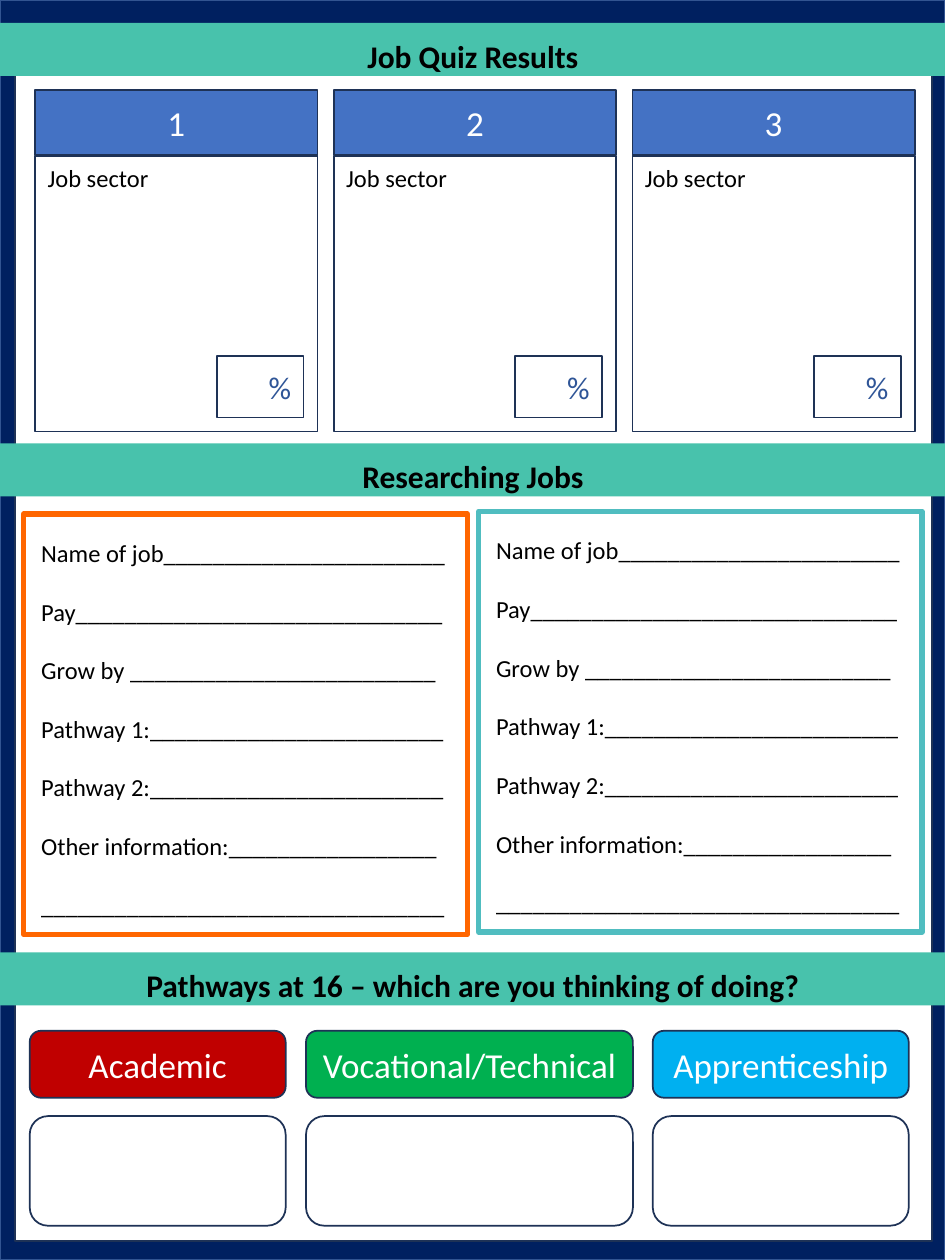
"""Build a one-page careers worksheet: quiz results, job research and pathways."""
from pptx import Presentation
from pptx.dml.color import RGBColor
from pptx.enum import shapes, text
from pptx.util import Cm, Pt

COLOURS = {
    "navy": "002060", "frame": "325491", "outline": "1E3256", "white": "FFFFFF",
    "black": "000000", "band": "48C2AC", "header": "4472C4", "percent": "2F5597",
    "orange": "FF6600", "teal": "50BDC0", "red": "C00000", "green": "00B050",
    "sky": "00B0F0",
}
RECT = shapes.MSO_SHAPE.RECTANGLE
ROUNDED = shapes.MSO_SHAPE.ROUNDED_RECTANGLE
ALIGN = text.PP_ALIGN
RESEARCH_PROMPTS = [("Name of job", 23), ("Pay", 30), ("Grow by ", 25), ("Pathway 1:", 24),
                    ("Pathway 2:", 24), ("Other information:", 17), ("", 33)]


def colour(name):
    """Return the named colour."""
    return RGBColor.from_string(COLOURS[name])


def write(frame, lines, size, ink, align=ALIGN.LEFT, bold=False):
    """Fill a text frame with one formatted paragraph per line."""
    frame.word_wrap = True
    frame.text = "\n".join(lines)
    for paragraph in frame.paragraphs:
        paragraph.alignment = align
        for run in paragraph.runs:
            run.font.name = "Calibri"
            run.font.size = Pt(size)
            run.font.bold = bold
            run.font.color.rgb = colour(ink)


def add_panel(slide, box, fill=None, line="outline", weight=1, kind=RECT):
    """Add a flat panel with an optional fill and outline."""
    panel = slide.shapes.add_shape(kind, *map(Cm, box))
    panel.shadow.inherit = False
    if fill:
        panel.fill.solid()
        panel.fill.fore_color.rgb = colour(fill)
    else:
        panel.fill.background()
    if line:
        panel.line.color.rgb = colour(line)
        panel.line.width = Pt(weight)
    else:
        panel.line.fill.background()
    panel.text_frame.vertical_anchor = text.MSO_ANCHOR.MIDDLE
    return panel


def add_band(slide, box, title):
    """Add a full-width section band with its title."""
    left, top, width, height = box
    add_panel(slide, box, "band", None)
    heading = slide.shapes.add_textbox(Cm(left + 0.05), Cm(top - 0.05),
                                       Cm(width - 0.1), Cm(height)).text_frame
    heading.margin_left = heading.margin_right = 0
    heading.margin_top = heading.margin_bottom = 0
    write(heading, [title], 18, "black", ALIGN.CENTER, True)
    heading.paragraphs[0].line_spacing = Pt(31)


def add_quiz_card(slide, box, rank):
    """Add a ranked result card with job sector and percentage."""
    left, top, width, height = box
    header = add_panel(slide, (left, top, width, 1.3), "header")
    write(header.text_frame, [str(rank)], 20, "white", ALIGN.CENTER)
    add_panel(slide, (left, top + 1.32, width, height - 1.32))
    sector = slide.shapes.add_textbox(Cm(left), Cm(top + 1.35), Cm(4.22), Cm(0.86))
    write(sector.text_frame, ["Job sector"], 14, "black")
    percent = add_panel(slide, (left + width - 2.03, top + height - 1.52, 1.75, 1.24))
    write(percent.text_frame, ["%"], 18, "percent", ALIGN.RIGHT)


def add_research_form(slide, box, border):
    """Add a bordered form with lines to fill in about a job."""
    left, top, width, height = box
    add_panel(slide, box, None, border, 3)
    form = slide.shapes.add_textbox(Cm(left + 0.1), Cm(top + 0.36),
                                    Cm(width - 0.25), Cm(height - 0.45)).text_frame
    write(form, [prompt + "_" * blanks for prompt, blanks in RESEARCH_PROMPTS], 14, "black")
    for paragraph in form.paragraphs[:-1]:
        paragraph.space_after = Pt(16.7)


def add_pathway(slide, box, name, fill):
    """Add a coloured pathway label above an empty answer box."""
    left, top, width, height = box
    label = add_panel(slide, (left, top, width, 1.35), fill, kind=ROUNDED)
    write(label.text_frame, [name], 20, "white", ALIGN.CENTER)
    add_panel(slide, (left, top + 1.72, width, height - 1.72), "white", kind=ROUNDED)


def main():
    """Lay out the worksheet and save it."""
    deck = Presentation()
    deck.slide_width, deck.slide_height = Cm(19.05), Cm(25.4)
    slide = deck.slides.add_slide(deck.slide_layouts[6])
    add_panel(slide, (0, 0, 19.05, 25.4), "navy", "frame")
    add_panel(slide, (0.3, 0.5, 18.49, 24.52), "white")

    sections = [(0.46, "Job Quiz Results"), (8.94, "Researching Jobs"),
                (19.2, "Pathways at 16 – which are you thinking of doing?")]
    for top, title in sections:
        add_band(slide, (0, top, 19.07, 1.07), title)
    for index in range(3):
        add_quiz_card(slide, (0.71 + 6.02 * index, 1.82, 5.69, 6.88), index + 1)
    add_research_form(slide, (0.48, 10.36, 8.94, 8.48), "orange")
    add_research_form(slide, (9.65, 10.31, 8.94, 8.48), "teal")

    pathways = [(0.6, 5.16, "Academic", "red"),
                (6.17, 6.59, "Vocational/Technical", "green"),
                (13.16, 5.16, "Apprenticeship", "sky")]
    for left, width, name, fill in pathways:
        add_pathway(slide, (left, 20.78, width, 3.93), name, fill)
    deck.save("out.pptx")


if __name__ == "__main__":
    main()
